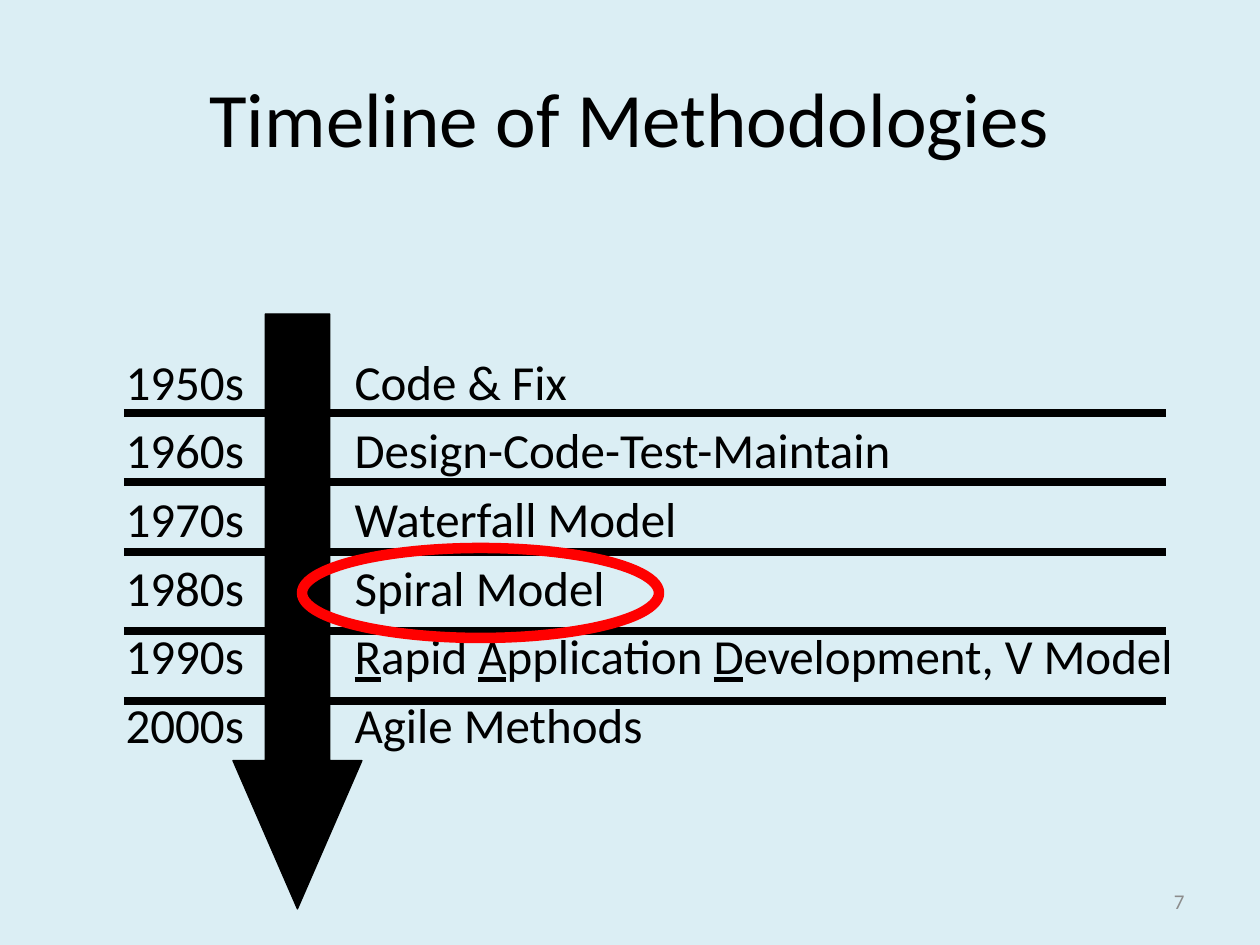
"""Build the slide that sets out the timeline of methodologies."""
from lxml.etree import SubElement
from pptx import Presentation
from pptx.dml.color import RGBColor
from pptx.enum.shapes import MSO_CONNECTOR as Connector, MSO_SHAPE as Shape
from pptx.enum.text import MSO_ANCHOR as Anchor, MSO_AUTO_SIZE as AutoSize, PP_ALIGN as Align
from pptx.oxml.ns import qn
from pptx.util import Emu, Pt

SCALE = 914400 / 126
BLACK = "000000"


def paint(color_format, value):
    color_format.rgb = RGBColor.from_string(value)


def add_text(paragraph, text, size=28, color=BLACK, align=Align.LEFT, underline=None):
    paragraph.alignment = align
    run = paragraph.add_run()
    run.text = text
    run.font.name = "Calibri"
    run.font.size = Pt(size)
    run.font.underline = underline
    paint(run.font.color, color)


presentation = Presentation()
presentation.slide_width = Emu(round(1260 * SCALE))
presentation.slide_height = Emu(round(945 * SCALE))
slide = presentation.slides.add_slide(presentation.slide_layouts[1])
slide.background.fill.solid()
paint(slide.background.fill.fore_color, "DBEEF4")

title, body = slide.placeholders
number = slide.shapes.add_textbox(0, 0, 0, 0)
arrow = slide.shapes.add_shape(Shape.DOWN_ARROW, 0, 0, 0, 0)

for y in (413, 482, 552, 631, 701):
    ends = [Emu(round(length * SCALE)) for length in (124, y, 1166, y)]
    divider = slide.shapes.add_connector(Connector.STRAIGHT, *ends)
    divider.line.width = Pt(4.5)
    paint(divider.line.color, BLACK)
    SubElement(divider.element.spPr, qn("a:effectLst"))

highlight = slide.shapes.add_shape(Shape.OVAL, 0, 0, 0, 0)

for shape, box in (
    (title, (63, 38, 1134, 157)),
    (body, (113, 345, 1083, 497)),
    (number, (903, 876, 294, 50)),
    (arrow, (233, 314, 129, 595)),
    (highlight, (302, 548, 357, 90)),
):
    shape.left, shape.top, shape.width, shape.height = (
        Emu(round(length * SCALE)) for length in box
    )

title.text_frame.vertical_anchor = Anchor.MIDDLE
add_text(title.text_frame.paragraphs[0], "Timeline of Methodologies", size=44, align=Align.CENTER)
number.text_frame.word_wrap = True
number.text_frame.vertical_anchor = Anchor.MIDDLE
add_text(number.text_frame.paragraphs[0], "7", size=12, color="8C8C8C", align=Align.RIGHT)

decades = (
    ("1950s", ["Code & Fix"]),
    ("1960s", ["Design-Code-Test-Maintain"]),
    ("1970s", ["Waterfall Model"]),
    ("1980s", ["Spiral Model"]),
    ("1990s", ["R", "apid ", "A", "pplication ", "D", "evelopment, V Model"]),
    ("2000s", ["Agile Methods"]),
)
frame = body.text_frame
frame.auto_size = AutoSize.NONE
for index, (decade, pieces) in enumerate(decades):
    paragraph = frame.add_paragraph() if index else frame.paragraphs[0]
    properties = paragraph._p.get_or_add_pPr()
    indent = round(229 * SCALE)
    properties.set("marL", str(indent))
    properties.set("indent", str(-indent))
    SubElement(properties, qn("a:buNone"))
    add_text(paragraph, decade + "\t")
    for piece in pieces:
        add_text(paragraph, piece, underline=len(piece) == 1)

arrow.adjustments[0] = 0.5
arrow.adjustments[1] = 1.15
arrow.fill.solid()
paint(arrow.fill.fore_color, BLACK)
highlight.fill.background()
for shape, color, width in ((arrow, BLACK, 0.75), (highlight, "FF0000", 6)):
    shape.shadow.inherit = False
    shape.line.width = Pt(width)
    paint(shape.line.color, color)

presentation.save("out.pptx")
